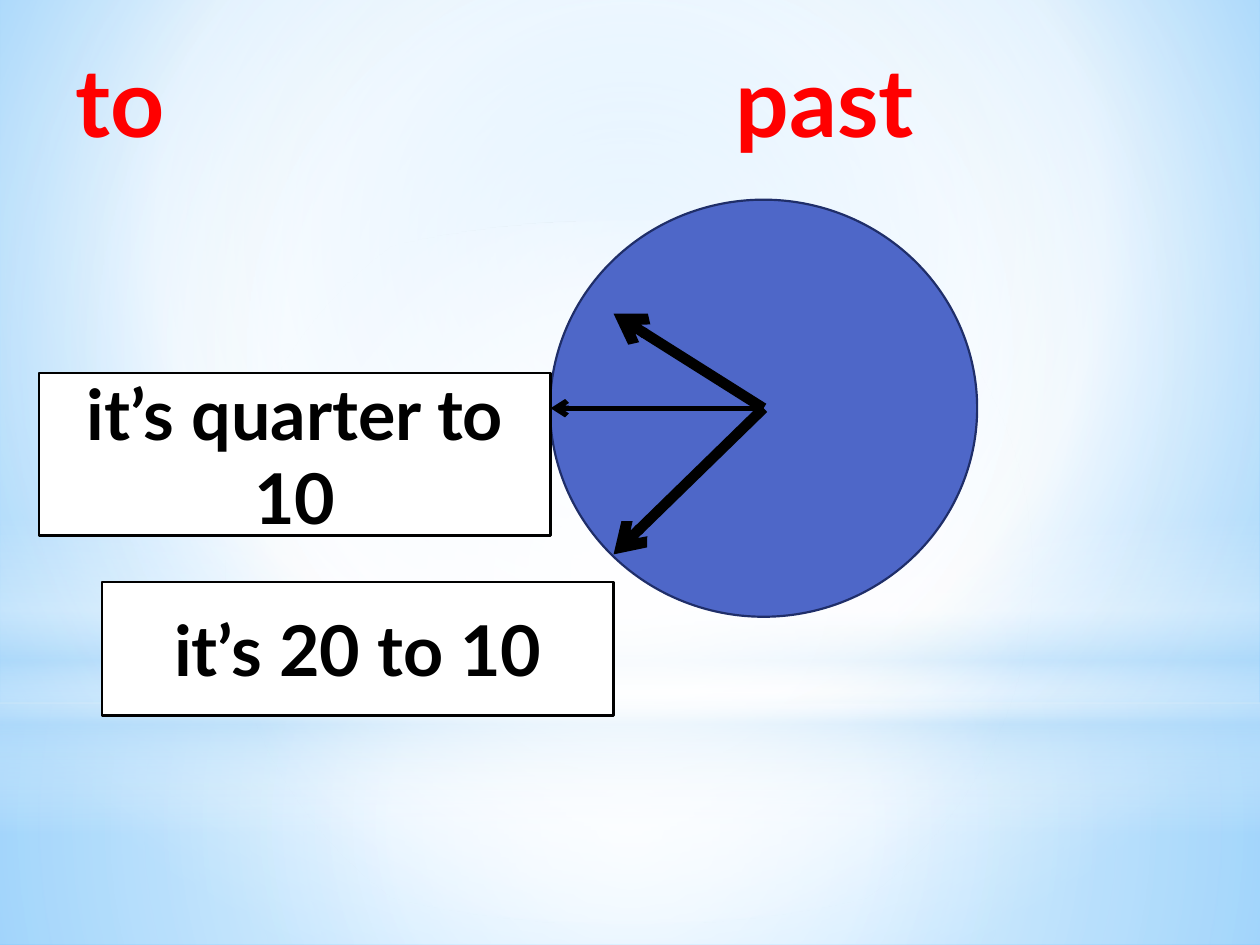
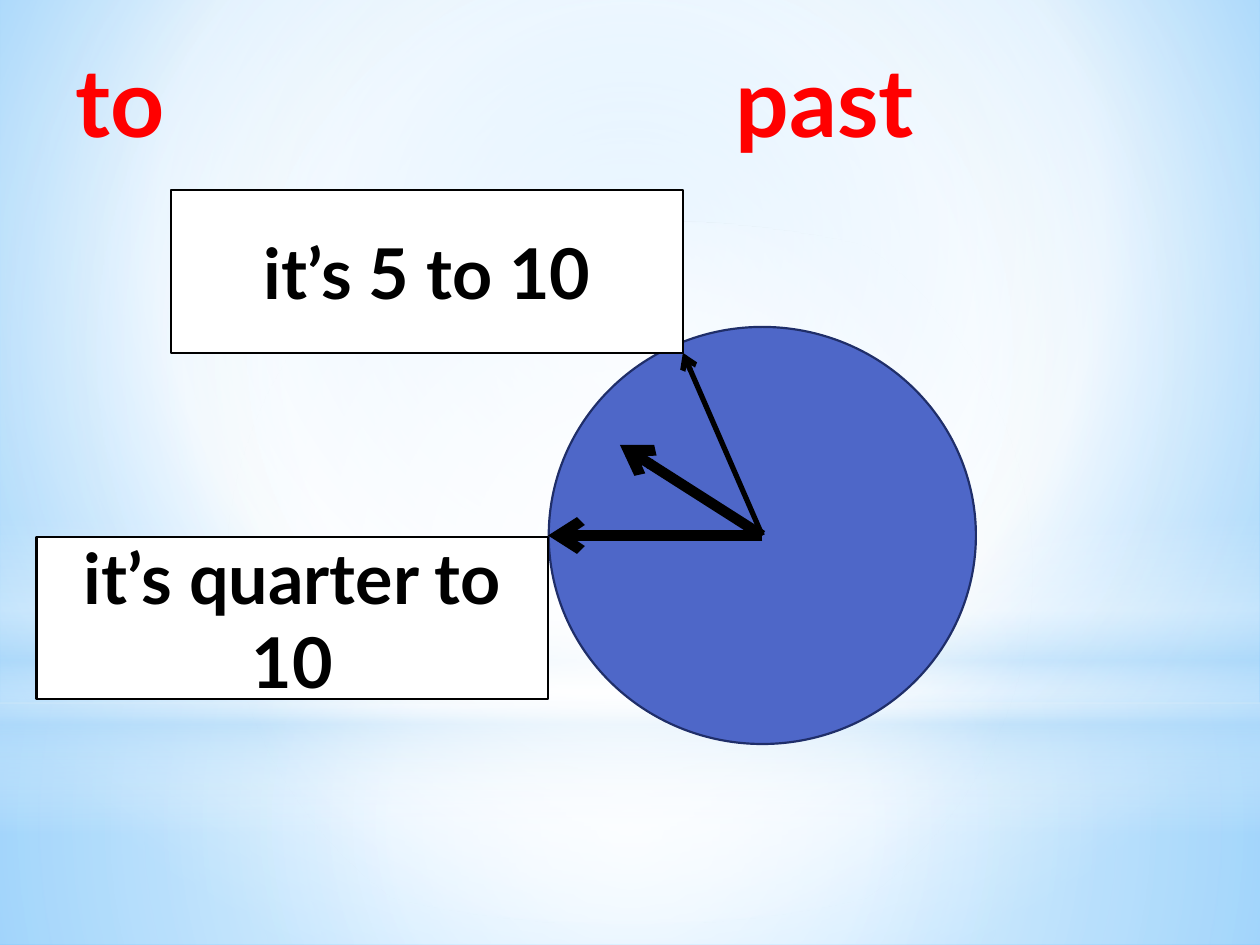
from dataclasses import dataclass

from pptx import Presentation
from pptx.dml.color import RGBColor
from pptx.enum.shapes import MSO_CONNECTOR, MSO_SHAPE
from pptx.enum.text import MSO_ANCHOR, MSO_AUTO_SIZE, PP_ALIGN
from pptx.oxml import parse_xml
from pptx.oxml.ns import nsdecls, qn
from pptx.util import Inches, Pt

RECTANGLE, OVAL = MSO_SHAPE.RECTANGLE, MSO_SHAPE.OVAL
STRAIGHT = MSO_CONNECTOR.STRAIGHT
MIDDLE, TOP = MSO_ANCHOR.MIDDLE, MSO_ANCHOR.TOP
CENTER, LEFT = PP_ALIGN.CENTER, PP_ALIGN.LEFT
NO_AUTOFIT = MSO_AUTO_SIZE.NONE


@dataclass(frozen=True)
class Theme:
    font: str = "Lato"
    heading: str = "FF0000"
    ink: str = "000000"
    paper: str = "FFFFFF"
    clock: str = "4E67C8"
    clock_edge: str = "1F2E69"
    mist: str = "B4DCFA"
    sky_light: str = "9ED5FF"
    sky_deep: str = "5BB9FF"
    heading_size: int = 54
    label_size: int = 40
    outline: float = 1.25
    thick_hand: int = 6
    thin_hand: int = 3


THEME = Theme()
CENTRED = (50, 50, 50, 50)
BACKGROUND = ([(0, THEME.sky_light, 100), (60, THEME.paper, 100),
               (100, THEME.sky_deep, 100)], (20, 10, 20, 60))
BANDS = [
    (RECTANGLE, (0, 5.58, 10, 1.92),
     [(0, THEME.paper, 91), (37, THEME.paper, 76), (100, THEME.mist, 79)], CENTRED),
    (RECTANGLE, (0, 0, 10, 5.58),
     [(0, THEME.paper, 89), (48, THEME.paper, 62), (100, THEME.mist, 79)], CENTRED),
    (RECTANGLE, (0, 4.12, 10, 2.5),
     [(0, THEME.paper, 0), (29, THEME.paper, 30), (45, THEME.mist, 40),
      (55, THEME.paper, 26), (65, THEME.mist, 60), (100, THEME.paper, 0)], None),
    (OVAL, (0, 1.75, 10, 5.58),
     [(0, THEME.paper, 100), (56, THEME.paper, 0)], CENTRED),
]

TWO_CONTENT_LAYOUT = 3
HEADINGS = [
    (1, "to", (0.5, 0.29, 5.24, 1.1)),
    (2, "past", (5.74, 0.29, 3.76, 1.1)),
]
CLOCK_SIZE = (3.39, 3.31)
LABEL_WIDTH = 4.06
CLOCKS = [
    {
        "center": (6.06, 3.24),
        "hour_tip": (4.87, 2.49),
        "readings": [
            ("it’s 20 to 10", (4.87, 4.4), THEME.thick_hand, 4.62, 1.06),
            ("it’s quarter to 10", (4.37, 3.24), THEME.thin_hand, 2.96, 1.29),
        ],
    },
    {
        "center": (6.05, 4.25),
        "hour_tip": (4.92, 3.53),
        "readings": [
            ("it’s quarter to 10", (4.35, 4.25), THEME.thick_hand, 4.26, 1.29),
            ("it’s 5 to 10", (5.42, 2.8), THEME.thin_hand, 1.51, 1.29),
        ],
    },
]


def color(value):
    return RGBColor.from_string(value)


def inches(values):
    return [Inches(value) for value in values]


def set_gradient(fill, properties, stops, focus):
    fill.solid()
    stop_xml = "".join(
        f'<a:gs pos="{position * 1000}"><a:srgbClr val="{shade}">'
        f'<a:alpha val="{opacity * 1000}"/></a:srgbClr></a:gs>'
        for position, shade, opacity in stops)
    if focus:
        sides = " ".join(f'{side}="{value * 1000}"' for side, value in zip("ltrb", focus))
        direction = f'<a:path path="circle"><a:fillToRect {sides}/></a:path>'
    else:
        direction = '<a:lin ang="5400000" scaled="0"/>'
    gradient = parse_xml(f'<a:gradFill {nsdecls("a")} rotWithShape="1">'
                         f'<a:gsLst>{stop_xml}</a:gsLst>{direction}</a:gradFill>')
    properties.replace(properties.find(qn("a:solidFill")), gradient)


def add_text(paragraph, text, size, shade):
    run = paragraph.add_run()
    run.text = text
    run.font.name = THEME.font
    run.font.size = Pt(size)
    run.font.bold = True
    run.font.color.rgb = color(shade)


def add_outlined(slide, kind, box, fill, edge):
    shape = slide.shapes.add_shape(kind, *inches(box))
    shape.shadow.inherit = False
    shape.fill.solid()
    shape.fill.fore_color.rgb = color(fill)
    shape.line.color.rgb = color(edge)
    shape.line.width = Pt(THEME.outline)
    return shape


def decorate_layout(layout, slide):
    background = layout.background.fill
    background.solid()
    set_gradient(background, layout.element.find(".//" + qn("p:bgPr")), *BACKGROUND)
    for position, (kind, box, stops, focus) in enumerate(BANDS, start=2):
        band = slide.shapes.add_shape(kind, *inches(box))
        band.shadow.inherit = False
        band.line.fill.background()
        set_gradient(band.fill, band.element.spPr, stops, focus)
        layout.element.cSld.spTree.insert(position, band.element)


def add_headings(slide):
    title = slide.shapes.title.element
    title.getparent().remove(title)
    for index, text, box in HEADINGS:
        body = slide.placeholders[index]
        body.left, body.top, body.width, body.height = inches(box)
        frame = body.text_frame
        frame.auto_size = NO_AUTOFIT
        frame.vertical_anchor = TOP
        paragraph = frame.paragraphs[0]
        properties = paragraph._p.get_or_add_pPr()
        properties.set("marL", "0")
        properties.set("indent", "0")
        properties.append(parse_xml(f'<a:buNone {nsdecls("a")}/>'))
        paragraph.alignment = LEFT
        paragraph.space_before = Pt(0)
        paragraph.space_after = Pt(3)
        add_text(paragraph, text, THEME.heading_size, THEME.heading)


def add_hand(slide, center, tip, width):
    hand = slide.shapes.add_connector(STRAIGHT, *inches((*center, *tip)))
    hand.line.color.rgb = color(THEME.ink)
    hand.line.width = Pt(width)
    outline = hand.element.spPr.find(qn("a:ln"))
    outline.append(parse_xml(f'<a:tailEnd {nsdecls("a")} type="arrow"/>'))
    hand.element.spPr.append(parse_xml(f'<a:effectLst {nsdecls("a")}/>'))


def add_label(slide, text, box):
    label = add_outlined(slide, RECTANGLE, box, THEME.paper, THEME.ink)
    frame = label.text_frame
    frame.word_wrap = True
    frame.vertical_anchor = MIDDLE
    paragraph = frame.paragraphs[0]
    paragraph.alignment = CENTER
    add_text(paragraph, text, THEME.label_size, THEME.ink)


def add_clock(slide, center, hour_tip, readings):
    width, height = CLOCK_SIZE
    face = (center[0] - width / 2, center[1] - height / 2, width, height)
    add_outlined(slide, OVAL, face, THEME.clock, THEME.clock_edge)
    add_hand(slide, center, hour_tip, THEME.thick_hand)
    for text, tip, hand_width, label_top, label_height in readings:
        add_hand(slide, center, tip, hand_width)
        add_label(slide, text, (tip[0] - LABEL_WIDTH, label_top, LABEL_WIDTH, label_height))


def main():
    presentation = Presentation()
    presentation.slide_width, presentation.slide_height = Inches(10), Inches(7.5)
    layout = presentation.slide_layouts[TWO_CONTENT_LAYOUT]
    slides = [presentation.slides.add_slide(layout) for _ in CLOCKS]
    decorate_layout(layout, slides[0])
    for slide, clock in zip(slides, CLOCKS):
        add_headings(slide)
        add_clock(slide, **clock)
    presentation.save("out.pptx")


if __name__ == "__main__":
    main()
